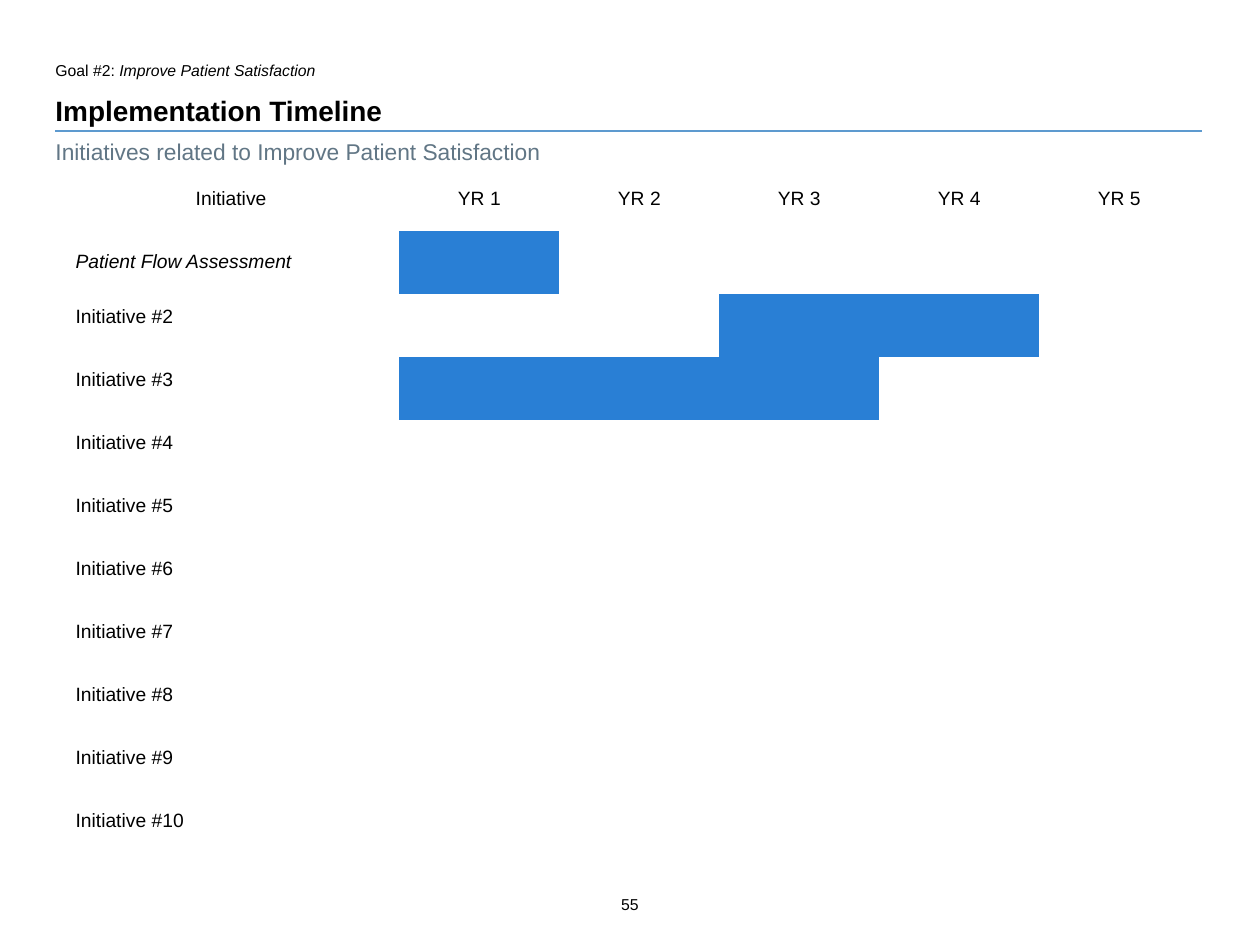
from lxml import etree
from pptx import Presentation
from pptx.dml.color import RGBColor
from pptx.enum.shapes import MSO_CONNECTOR
from pptx.enum.text import MSO_ANCHOR, MSO_AUTO_SIZE, PP_ALIGN
from pptx.oxml.ns import qn
from pptx.util import Inches, Pt

COLORS = {"text": "000000", "subtitle": "617685", "rule": "5D9ACF", "bar": "297FD5"}
NO_STYLE = "{2D5ABB26-0587-4C30-8999-92F81FD0307C}"
YEARS = 5
INITIATIVES = ["Patient Flow Assessment"] + [f"Initiative #{n}" for n in range(2, 11)]
ACTIVE_YEARS = {1: [1], 2: [3, 4], 3: [1, 2, 3]}


def place(sp, left, top, width, height, side=0, edge=0.04, anchor=MSO_ANCHOR.TOP):
    sp.left, sp.top, sp.width, sp.height = map(Inches, (left, top, width, height))
    tf = sp.text_frame
    tf.word_wrap = True
    tf.auto_size = MSO_AUTO_SIZE.NONE
    tf.vertical_anchor = anchor
    tf.margin_left = tf.margin_right = Inches(side)
    tf.margin_top = tf.margin_bottom = Inches(edge)
    return tf.paragraphs[0]


def add_run(p, text, size, color="text", bold=False, italic=False, align=PP_ALIGN.LEFT):
    p.alignment = align
    p.space_before = Pt(0)
    r = p.add_run()
    r.text = text
    r.font.name = "Arial"
    r.font.size = Pt(size)
    r.font.bold = bold
    r.font.italic = italic
    r.font.color.rgb = RGBColor.from_string(COLORS[color])


prs = Presentation()
prs.slide_width, prs.slide_height = Inches(10), Inches(7.5)
s = prs.slides.add_slide(prs.slide_layouts[1])

rule = s.shapes.add_connector(
    MSO_CONNECTOR.STRAIGHT, Inches(0.44), Inches(1.04), Inches(9.54), Inches(1.04))
rule.line.color.rgb = RGBColor.from_string(COLORS["rule"])
rule.line.width = Pt(0.75)
etree.SubElement(rule._element.spPr, qn("a:effectLst"))

p = place(s.shapes.title, 0.44, 0.74, 9.09, 0.27, edge=0, anchor=MSO_ANCHOR.BOTTOM)
add_run(p, "Implementation Timeline", 16, bold=True)

p = place(s.placeholders[1], 0.44, 0.44, 2.89, 0.2)
add_run(p, "Goal #2: ", 9)
add_run(p, "Improve Patient Satisfaction", 9, italic=True)
pPr = p._p.get_or_add_pPr()
pPr.set("marL", "0")
pPr.set("indent", "0")
etree.SubElement(pPr, qn("a:buNone"))

subtitle = s.shapes.add_textbox(0, 0, 0, 0)
p = place(subtitle, 0.44, 1.05, 9.09, 0.3)
add_run(p, "Initiatives related to Improve Patient Satisfaction", 13, "subtitle")

page_number = s.shapes.add_textbox(0, 0, 0, 0)
p = place(page_number, 4.66, 7.06, 0.68, 0.26, side=0.04)
add_run(p, "55", 9, align=PP_ALIGN.CENTER)

rows = len(INITIATIVES) + 1
timeline = s.shapes.add_table(
    rows, YEARS + 1, Inches(0.5), Inches(1.33), Inches(9.03), Inches(0.5 * rows)).table
timeline.first_row = timeline.horz_banding = False
timeline._tbl.tblPr.find(qn("a:tableStyleId")).text = NO_STYLE
for i, column in enumerate(timeline.columns):
    column.width = Inches(1.27 if i else 2.67)
for row in timeline.rows:
    row.height = Inches(0.5)
for cell in timeline.iter_cells():
    cell.fill.background()

headers = ["Initiative"] + [f"YR {n}" for n in range(1, YEARS + 1)]
for i, header in enumerate(headers):
    cell = timeline.cell(0, i)
    cell.vertical_anchor = MSO_ANCHOR.MIDDLE
    cell.margin_left = cell.margin_right = Inches(0.14 if i else 0.1)
    cell.margin_top = cell.margin_bottom = Inches(0.07 if i else 0.1)
    add_run(cell.text_frame.paragraphs[0], header, 11, align=PP_ALIGN.CENTER)

for i, initiative in enumerate(INITIATIVES, 1):
    cell = timeline.cell(i, 0)
    cell.vertical_anchor = MSO_ANCHOR.MIDDLE if i == 1 else MSO_ANCHOR.TOP
    cell.margin_left = cell.margin_right = Inches(0.1)
    cell.margin_top = cell.margin_bottom = Inches(0.1)
    add_run(cell.text_frame.paragraphs[0], initiative, 11, italic=i == 1)
    for year in ACTIVE_YEARS.get(i, []):
        bar = timeline.cell(i, year)
        bar.fill.solid()
        bar.fill.fore_color.rgb = RGBColor.from_string(COLORS["bar"])

prs.save("out.pptx")
